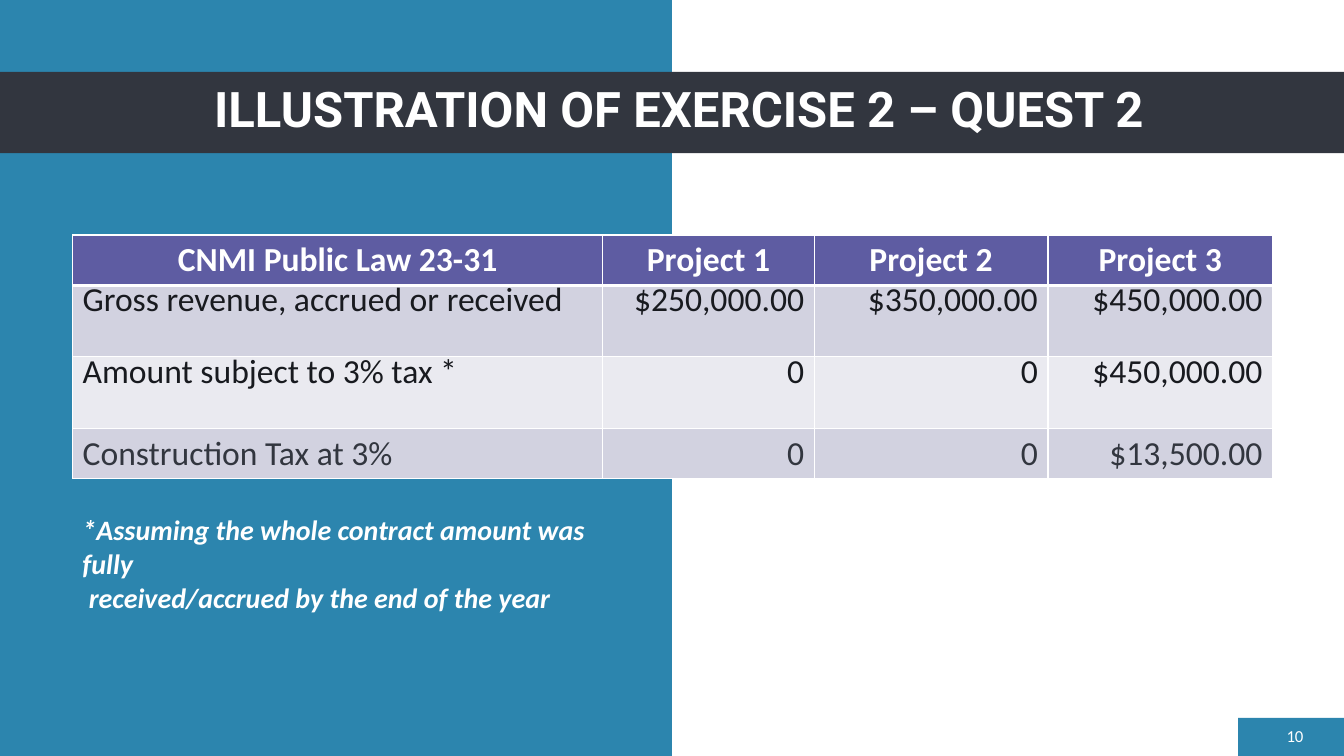
from lxml.etree import SubElement
from pptx import Presentation
from pptx.dml.color import RGBColor
from pptx.enum.shapes import MSO_SHAPE as Shape
from pptx.enum.text import MSO_ANCHOR as Anchor, PP_ALIGN as Align
from pptx.oxml.ns import qn
from pptx.util import Cm, Pt

WHITE = RGBColor(0xFF, 0xFF, 0xFF)
BLUE = RGBColor(0x2C, 0x85, 0xAE)
CHARCOAL = RGBColor(0x32, 0x36, 0x3F)
INK = RGBColor(0x18, 0x1A, 0x1F)
PURPLE = RGBColor(0x5E, 0x5C, 0xA2)
LILAC = RGBColor(0xD2, 0xD2, 0xE0)
PALE = RGBColor(0xEA, 0xEA, 0xF0)

WIDTH, HEIGHT = Cm(33.87), Cm(19.05)
TABLE_LEFT = Cm(1.83)
COLUMN_WIDTHS = [Cm(13.36), Cm(5.33), Cm(5.89), Cm(5.66)]
ROW_HEIGHTS = [Cm(1.27), Cm(1.8), Cm(1.8), Cm(1.27)]
TAX_ROWS = [
    ["CNMI Public Law 23-31", "Project 1", "Project 2", "Project 3"],
    ["Gross revenue, accrued or received", "$250,000.00", "$350,000.00", "$450,000.00"],
    ["Amount subject to 3% tax *", "0", "0", "$450,000.00"],
    ["Construction Tax at 3%", "0", "0", "$13,500.00"],
]
ROW_FILLS = [PURPLE, LILAC, PALE, LILAC]
ROW_INKS = [WHITE, INK, INK, CHARCOAL]


def add_block(slide, left, top, width, height, color):
    block = slide.shapes.add_shape(Shape.RECTANGLE, left, top, width, height)
    block.shadow.inherit = False
    block.fill.solid()
    block.fill.fore_color.rgb = color
    block.line.fill.background()


def style_font(para, size, color, name="Calibri", bold=False, italic=False):
    font = para.font
    font.name, font.size = name, Pt(size)
    font.bold, font.italic = bold, italic
    font.color.rgb = color


def add_text_box(slide, left, top, width, height, anchor):
    frame = slide.shapes.add_textbox(left, top, width, height).text_frame
    frame.word_wrap = True
    frame.vertical_anchor = anchor
    return frame


def add_title_band(slide, left, top, width, height):
    add_block(slide, left, top, width, height, CHARCOAL)
    frame = add_text_box(slide, left + Cm(1.55), top - Cm(0.03), Cm(31.14), height, Anchor.MIDDLE)
    para = frame.paragraphs[0]
    para.text = "ILLUSTRATION OF EXERCISE 2 – QUEST 2"
    para.alignment = Align.CENTER
    para.line_spacing = 0.9
    style_font(para, 35, WHITE, "Roboto", bold=True)


def add_page_number(slide, left, top, width, height):
    add_block(slide, left, top, width, height, BLUE)
    box_width = Cm(7.62)
    box_left = left + width - Cm(0.77) - box_width
    frame = add_text_box(slide, box_left, top - Cm(0.05), box_width, Cm(1.02), Anchor.MIDDLE)
    para = frame.paragraphs[0]
    para.text = "10"
    para.alignment = Align.RIGHT
    para.space_after = Pt(6)
    style_font(para, 12, WHITE)


def add_footnote(slide, left, top, width, height):
    frame = add_text_box(slide, left, top, width, height, Anchor.TOP)
    frame.text = "*Assuming the whole contract amount was fully\n received/accrued by the end of the year"
    for para in frame.paragraphs:
        style_font(para, 20, WHITE, bold=True, italic=True)


def set_borders(cell, top, bottom):
    properties = cell._tc.get_or_add_tcPr()
    for side, points in (("L", 1), ("R", 1), ("T", top), ("B", bottom)):
        line = SubElement(properties, qn(f"a:ln{side}"), w=str(Pt(points)))
        fill = SubElement(line, qn("a:solidFill"))
        SubElement(fill, qn("a:srgbClr"), val=str(WHITE))


def add_tax_table(slide, left, top):
    table = slide.shapes.add_table(
        len(TAX_ROWS), len(COLUMN_WIDTHS), left, top, sum(COLUMN_WIDTHS), sum(ROW_HEIGHTS)
    ).table
    for column, width in zip(table.columns, COLUMN_WIDTHS):
        column.width = width
    for r, values in enumerate(TAX_ROWS):
        table.rows[r].height = ROW_HEIGHTS[r]
        for c, value in enumerate(values):
            cell = table.cell(r, c)
            set_borders(cell, top=3 if r == 1 else 1, bottom=3 if r == 0 else 1)
            cell.fill.solid()
            cell.fill.fore_color.rgb = ROW_FILLS[r]
            para = cell.text_frame.paragraphs[0]
            para.text = value
            para.alignment = Align.CENTER if r == 0 else Align.RIGHT if c else Align.LEFT
            if r in (1, 2):
                para.line_spacing = Pt(21.8)
            if r == 3:
                cell.vertical_anchor = Anchor.MIDDLE
            style_font(para, 24, ROW_INKS[r], bold=r == 0)


def main():
    deck = Presentation()
    deck.slide_width, deck.slide_height = WIDTH, HEIGHT
    slide = deck.slides.add_slide(deck.slide_layouts[6])
    add_block(slide, 0, 0, WIDTH // 2, HEIGHT, BLUE)
    add_title_band(slide, 0, Cm(1.81), WIDTH, Cm(2.05))
    add_page_number(slide, WIDTH - Cm(2.67), HEIGHT - Cm(0.96), Cm(2.67), Cm(0.96))
    add_footnote(slide, TABLE_LEFT, Cm(12.8), Cm(14.2), Cm(1.96))
    add_tax_table(slide, TABLE_LEFT, Cm(5.92))
    deck.save("out.pptx")


if __name__ == "__main__":
    main()
